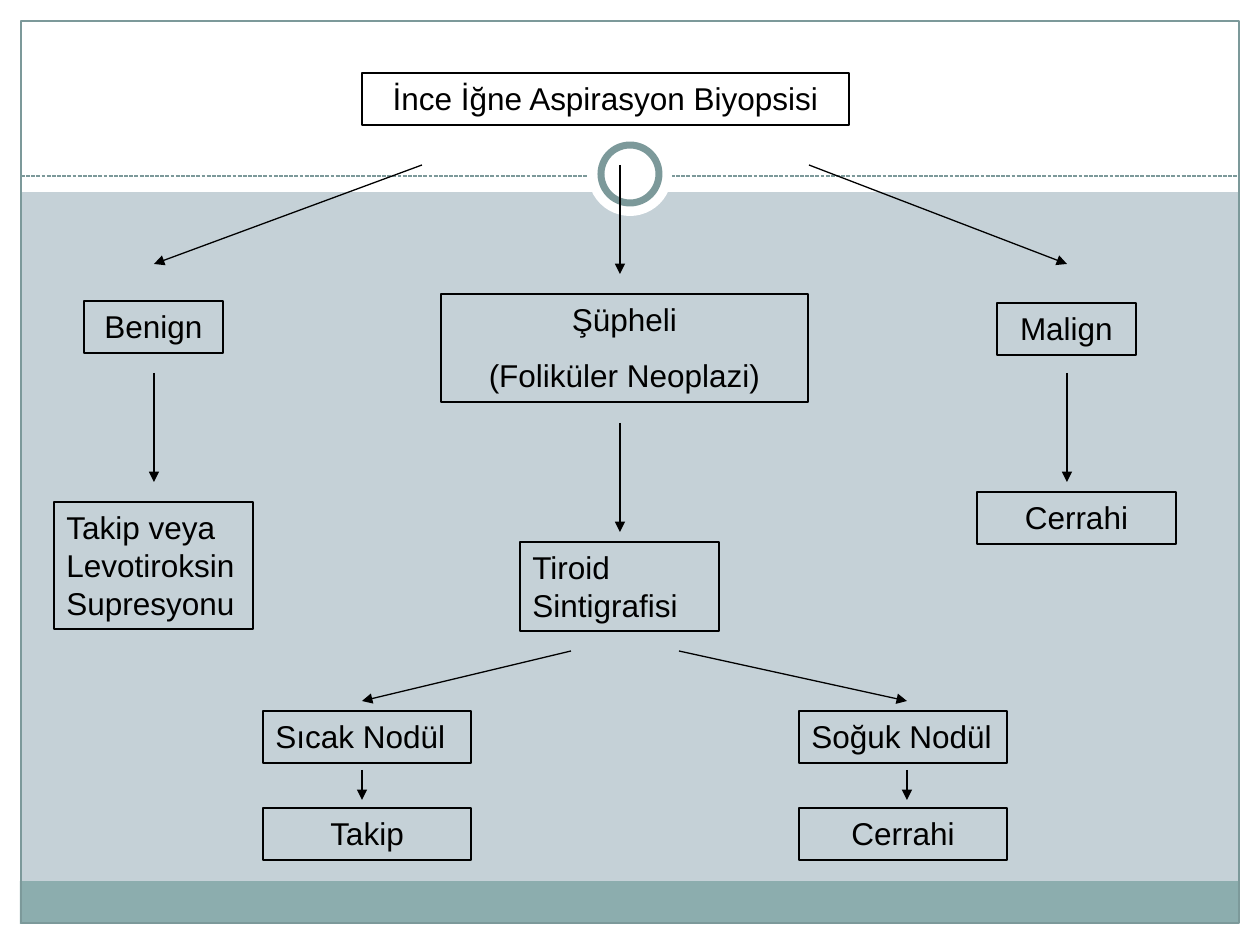
from lxml import etree
from pptx import Presentation
from pptx.dml.color import RGBColor
from pptx.enum.dml import MSO_LINE
from pptx.enum.shapes import MSO_CONNECTOR, MSO_SHAPE
from pptx.enum.text import MSO_ANCHOR, MSO_AUTO_SIZE, PP_ALIGN
from pptx.oxml.ns import qn
from pptx.util import Emu, Pt

RECT, OVAL = MSO_SHAPE.RECTANGLE, MSO_SHAPE.OVAL
STRAIGHT = MSO_CONNECTOR.STRAIGHT
LEFT, CENTER = PP_ALIGN.LEFT, PP_ALIGN.CENTER
DASH = MSO_LINE.SQUARE_DOT
FIT = MSO_AUTO_SIZE.SHAPE_TO_FIT_TEXT
TOP = MSO_ANCHOR.TOP

W, H, SCALE = 1260, 945, 914400 / 126
COLORS = {
    "background": "C5D1D7",
    "white": "FFFFFF",
    "band": "8CADAE",
    "frame": "7C999A",
    "ink": "000000",
}

PANELS = [
    ((0, 924, W, 21), "white"),
    ((0, 0, W, 192), "white"),
    ((0, 0, 21, H), "white"),
    ((1239, 0, 21, H), "white"),
    ((20, 881, 1218, 43), "band"),
]

BOXES = [
    (["İnce İğne Aspirasyon Biyopsisi"], (362, 73, 487, 52), CENTER),
    (["Benign"], (84, 301, 139, 52), CENTER),
    (["Malign"], (997, 303, 139, 52), CENTER),
    (["Şüpheli", "(Foliküler Neoplazi)"], (441, 294, 367, 108), CENTER),
    (["Takip veya Levotiroksin Supresyonu"], (54, 502, 199, 127), LEFT),
    (["Cerrahi"], (977, 492, 199, 52), CENTER),
    (["Tiroid Sintigrafisi"], (520, 542, 199, 89), LEFT),
    (["Sıcak Nodül"], (263, 711, 208, 52), LEFT),
    (["Soğuk Nodül"], (799, 711, 208, 52), LEFT),
    (["Takip"], (263, 808, 208, 52), CENTER),
    (["Cerrahi"], (799, 808, 208, 52), CENTER),
]

BENIGN_X, SUSPECT_X, MALIGN_X, HOT_X, COLD_X = 154, 620, 1067, 362, 907
ARROWS = [
    (422, 165, BENIGN_X, 264),
    (SUSPECT_X, 165, SUSPECT_X, 274),
    (809, 165, MALIGN_X, 264),
    (BENIGN_X, 373, BENIGN_X, 482),
    (MALIGN_X, 373, MALIGN_X, 482),
    (SUSPECT_X, 423, SUSPECT_X, 532),
    (571, 651, HOT_X, 701),
    (679, 651, COLD_X, 701),
    (HOT_X, 770, HOT_X, 800),
    (COLD_X, 770, COLD_X, 800),
]


def px(n):
    return Emu(round(n * SCALE))


def color(name):
    return RGBColor.from_string(COLORS[name])


def add_shape(slide, kind, box, fill=None, line=None, width=0.75):
    s = slide.shapes.add_shape(kind, *map(px, box))
    s.shadow.inherit = False
    if fill:
        s.fill.solid()
        s.fill.fore_color.rgb = color(fill)
    else:
        s.fill.background()
    if line:
        s.line.color.rgb = color(line)
        s.line.width = Pt(width)
    else:
        s.line.fill.background()
    return s


def add_text(s, paragraphs, align=CENTER, size=18, font="Arial", ink="ink"):
    tf = s.text_frame
    tf.word_wrap = True
    tf.auto_size = FIT
    tf.vertical_anchor = TOP
    for i, text in enumerate(paragraphs):
        p = tf.paragraphs[0] if i == 0 else tf.add_paragraph()
        p.alignment = align
        p.space_before = Pt(10 if i else 0)
        r = p.add_run()
        r.text = text
        r.font.size = Pt(size)
        r.font.name = font
        r.font.color.rgb = color(ink)


def add_line(slide, ends, ink, dash=None, arrow=False):
    c = slide.shapes.add_connector(STRAIGHT, *map(px, ends))
    c.line.color.rgb = color(ink)
    c.line.width = Pt(0.75)
    if dash:
        c.line.dash_style = dash
    if arrow:
        etree.SubElement(c.line._get_or_add_ln(), qn("a:tailEnd"), type="triangle")
    etree.SubElement(c._element.spPr, qn("a:effectLst"))


def main():
    prs = Presentation()
    prs.slide_width, prs.slide_height = px(W), px(H)
    slide = prs.slides.add_slide(prs.slide_layouts[6])
    bg = slide.background.fill
    bg.solid()
    bg.fore_color.rgb = color("background")

    for box, fill in PANELS:
        add_shape(slide, RECT, box, fill)
    add_shape(slide, RECT, (21, 21, 1218, 902), line="frame")
    add_line(slide, (21, 176, 1239, 176), "frame", dash=DASH)
    add_shape(slide, OVAL, (588, 132, 84, 84), "white")
    add_shape(slide, OVAL, (601, 145, 58, 58), "white", "frame", 4)

    for paragraphs, box, align in BOXES:
        add_text(add_shape(slide, RECT, box, line="ink"), paragraphs, align=align)
    for ends in ARROWS:
        add_line(slide, ends, "ink", arrow=True)
    prs.save("out.pptx")


if __name__ == "__main__":
    main()
